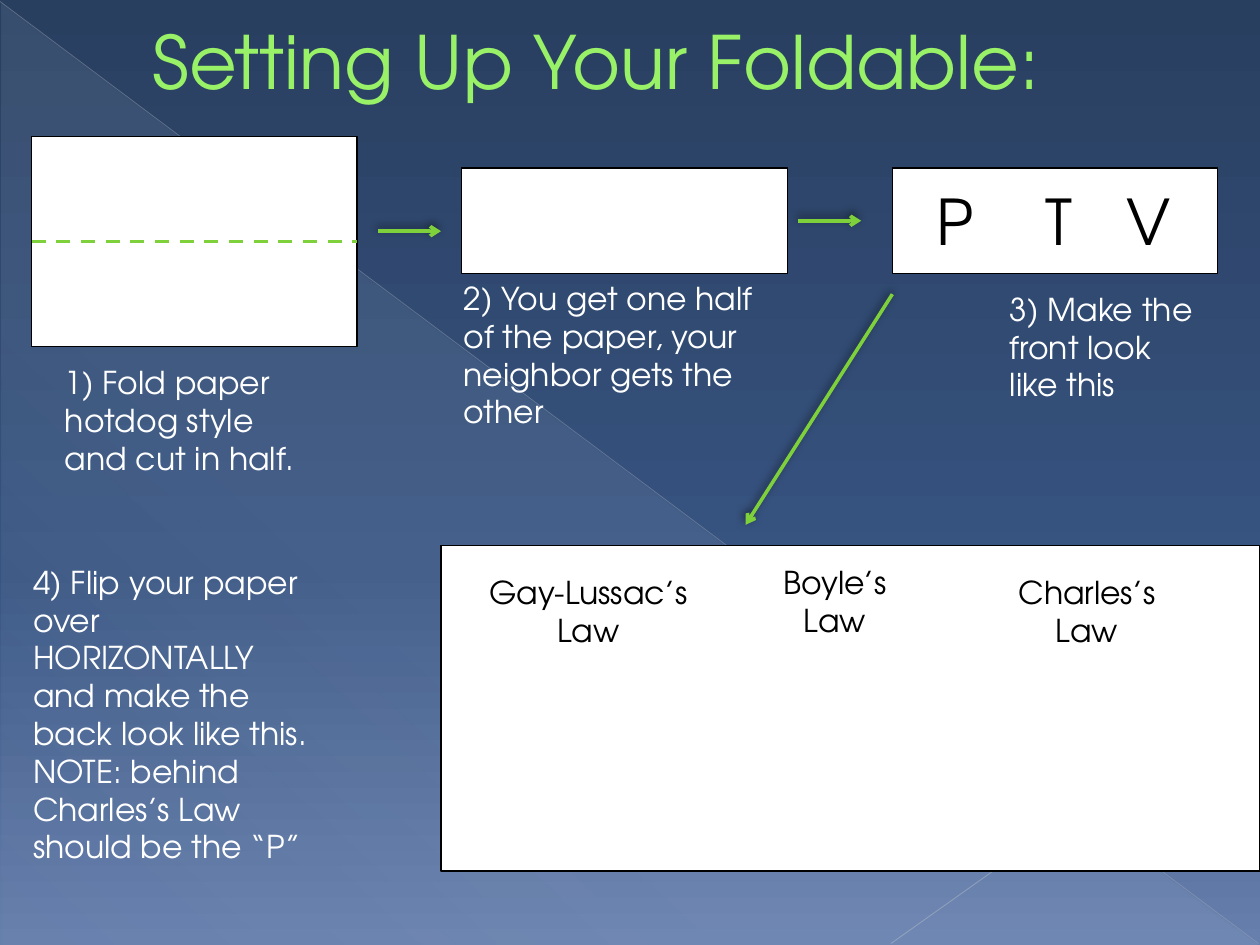
from pptx import Presentation
from pptx import util as u
from pptx.dml.color import RGBColor
from pptx.enum import dml, shapes, text
from pptx.oxml.ns import qn
from lxml import etree

FONT = "TeX Gyre Adventor"
WHITE = RGBColor(0xFF, 0xFF, 0xFF)
BLACK = RGBColor(0, 0, 0)
GREEN = RGBColor(0x7F, 0xD1, 0x3B)
TITLE_GREEN = RGBColor(0x98, 0xF1, 0x67)
TITLE_EDGE = RGBColor(0x58, 0x91, 0x29)
PALE_BLUE = RGBColor(0xD6, 0xEC, 0xFF)
PALE_GREY = RGBColor(0xB7, 0xBC, 0xC5)
LIGHT_GREY = RGBColor(0xBF, 0xC3, 0xCB)
SKY = [(0, RGBColor(0x29, 0x3F, 0x60), 100),
       (60, RGBColor(0x37, 0x53, 0x80), 100),
       (100, RGBColor(0x66, 0x7F, 0xAC), 100)]
GLOW = [(0, PALE_BLUE, 10), (70, PALE_BLUE, 8), (100, PALE_BLUE, 1)]

CARD_WIDTH, HALF_HEIGHT = 6.56, 2.12
CARD_LEFTS = (0.64, 9.31, 17.99)


def add_element(parent, tag, **attributes):
    return etree.SubElement(parent, qn(tag), attributes)


def add_color(parent, color, alpha=100):
    element = add_element(parent, "a:srgbClr", val=str(color))
    if alpha < 100:
        add_element(element, "a:alpha", val=str(alpha * 1000))


def set_gradient(fill, owner, stops, angle):
    """Fill with (position, colour, opacity) stops; owner is the XML holding the fill."""
    fill.gradient()
    fill.gradient_angle = angle
    stop_list = next(owner.iter(qn("a:gsLst")))
    for stop in list(stop_list):
        stop_list.remove(stop)
    for position, color, alpha in stops:
        stop = add_element(stop_list, "a:gs", pos=str(position * 1000))
        add_color(stop, color, alpha)


def add_line(slide, start, end, color, width, alpha=100):
    points = [u.Cm(value) for value in (*start, *end)]
    line = slide.shapes.add_connector(shapes.MSO_CONNECTOR.STRAIGHT, *points)
    line.line.color.rgb = color
    line.line.width = u.Pt(width)
    if alpha < 100:
        color_element = next(line.element.spPr.iter(qn("a:srgbClr")))
        add_element(color_element, "a:alpha", val=str(alpha * 1000))
    add_element(line.element.spPr, "a:effectLst")
    return line


def add_arrow(slide, start, end):
    arrow = add_line(slide, start, end, GREEN, 2)
    add_element(arrow.line._get_or_add_ln(), "a:tailEnd", type="arrow")
    effects = arrow.element.spPr.find(qn("a:effectLst"))
    shadow = add_element(effects, "a:outerShdw", blurRad=str(u.Pt(5)), dist=str(u.Pt(2)),
                         dir=str(245 * 60000), rotWithShape="0")
    add_color(shadow, BLACK, 50)


def add_paper(slide, left, top, width, height):
    paper = slide.shapes.add_shape(shapes.MSO_SHAPE.RECTANGLE, u.Cm(left), u.Cm(top),
                                   u.Cm(width), u.Cm(height))
    paper.shadow.inherit = False
    paper.fill.solid()
    paper.fill.fore_color.rgb = WHITE
    paper.line.color.rgb = BLACK
    paper.line.width = u.Pt(0.75)
    return paper


def format_text(paragraph, size, color, alignment):
    paragraph.font.name = FONT
    paragraph.font.size = u.Pt(size)
    paragraph.font.color.rgb = color
    paragraph.alignment = alignment


def add_text(slide, lines, left, top, width, height, color, alignment=text.PP_ALIGN.LEFT):
    box = slide.shapes.add_textbox(u.Cm(left), u.Cm(top), u.Cm(width), u.Cm(height))
    frame = box.text_frame
    frame.word_wrap = True
    frame.auto_size = text.MSO_AUTO_SIZE.SHAPE_TO_FIT_TEXT
    frame.text = "\n".join(lines)
    for paragraph in frame.paragraphs:
        format_text(paragraph, 18, color, alignment)


def add_front_letters(paper):
    """Write the three letters on tab stops across the paper."""
    frame = paper.text_frame
    frame.margin_left = u.Cm(0.89)
    frame.vertical_anchor = text.MSO_ANCHOR.MIDDLE
    frame.text = "P\tT\tV"
    paragraph = frame.paragraphs[0]
    format_text(paragraph, 36, BLACK, text.PP_ALIGN.LEFT)
    tabs = etree.Element(qn("a:tabLst"))
    for position in (2.2, 3.83):
        add_element(tabs, "a:tab", pos=str(u.Cm(position)), algn="l")
    paragraph._p.get_or_add_pPr().insert(0, tabs)


def add_backdrop(slide):
    set_gradient(slide.background.fill, slide.element, SKY, 270)
    triangle = slide.shapes.add_shape(shapes.MSO_SHAPE.RIGHT_TRIANGLE, u.Cm(0.03), u.Cm(0.05),
                                      u.Cm(25.35), u.Cm(19))
    triangle.shadow.inherit = False
    triangle.line.fill.background()
    set_gradient(triangle.fill, triangle.element, GLOW, 227)
    add_line(slide, (0, 0.03), (25.37, 19.02), PALE_GREY, 0.39, 35)
    add_line(slide, (25.4, 13.74), (17.96, 19.02), LIGHT_GREY, 0.47, 45)


def add_title(slide, wording):
    title = slide.shapes.title
    title.left, title.top, title.width, title.height = map(u.Cm, (1.47, -0.43, 22.66, 3.28))
    title.element.getparent().append(title.element)  # in front of the backdrop
    frame = title.text_frame
    frame.auto_size = text.MSO_AUTO_SIZE.NONE
    frame.vertical_anchor = text.MSO_ANCHOR.MIDDLE
    frame.text = wording
    paragraph = frame.paragraphs[0]
    format_text(paragraph, 42, TITLE_GREEN, text.PP_ALIGN.LEFT)
    properties = paragraph._p.get_or_add_pPr()
    properties.set("marL", str(u.Cm(1.35)))
    properties.set("indent", "0")
    outline = etree.Element(qn("a:ln"), w=str(u.Pt(0.5)))
    add_color(add_element(outline, "a:solidFill"), TITLE_EDGE)
    paragraph.runs[0]._r.get_or_add_rPr().insert(0, outline)


def main():
    presentation = Presentation()
    presentation.slide_width, presentation.slide_height = u.Cm(25.4), u.Cm(19.05)
    slide = presentation.slides.add_slide(presentation.slide_layouts[5])
    add_backdrop(slide)
    add_title(slide, "Setting Up Your Foldable:")

    whole_left, half_left, front_left = CARD_LEFTS
    add_paper(slide, whole_left, 2.75, CARD_WIDTH, 2 * HALF_HEIGHT)
    fold = add_line(slide, (whole_left, 4.87), (whole_left + CARD_WIDTH, 4.87), GREEN, 2)
    fold.line.dash_style = dml.MSO_LINE.DASH
    add_paper(slide, half_left, 3.39, CARD_WIDTH, HALF_HEIGHT)
    add_front_letters(add_paper(slide, front_left, 3.39, CARD_WIDTH, HALF_HEIGHT))
    add_paper(slide, 8.89, 11, 16.51, 6.56)

    for law, left, top, width in (("Gay-Lussac’s Law", 9.53, 11.43, 4.66),
                                  ("Boyle’s Law", 15.24, 11.22, 3.18),
                                  ("Charles’s Law", 20.11, 11.43, 3.6)):
        add_text(slide, [law], left, top, width, 1.8, BLACK, text.PP_ALIGN.CENTER)

    for start, end in (((7.62, 4.66), (8.89, 4.66)),
                       ((16.09, 4.45), (17.36, 4.45)),
                       ((17.99, 5.93), (15.03, 10.58))):
        add_arrow(slide, start, end)

    steps = (
        (["1) Fold paper hotdog style and cut in half."], 1.06, 7.2, 5.29, 2.57),
        (["2) You get one half of the paper, your neighbor gets the other"],
         9.1, 5.5, 6.35, 3.33),
        (["3) Make the front look like this"], 20.11, 5.72, 4.23, 2.57),
        (["4) Flip your paper over",
          "HORIZONTALLY and make the back look like this.",
          "NOTE: behind Charles’s Law should be the “P”"], 0.42, 11.22, 6.14, 6.4),
    )
    for lines, *place in steps:
        add_text(slide, lines, *place, WHITE)

    presentation.save("out.pptx")


if __name__ == "__main__":
    main()
